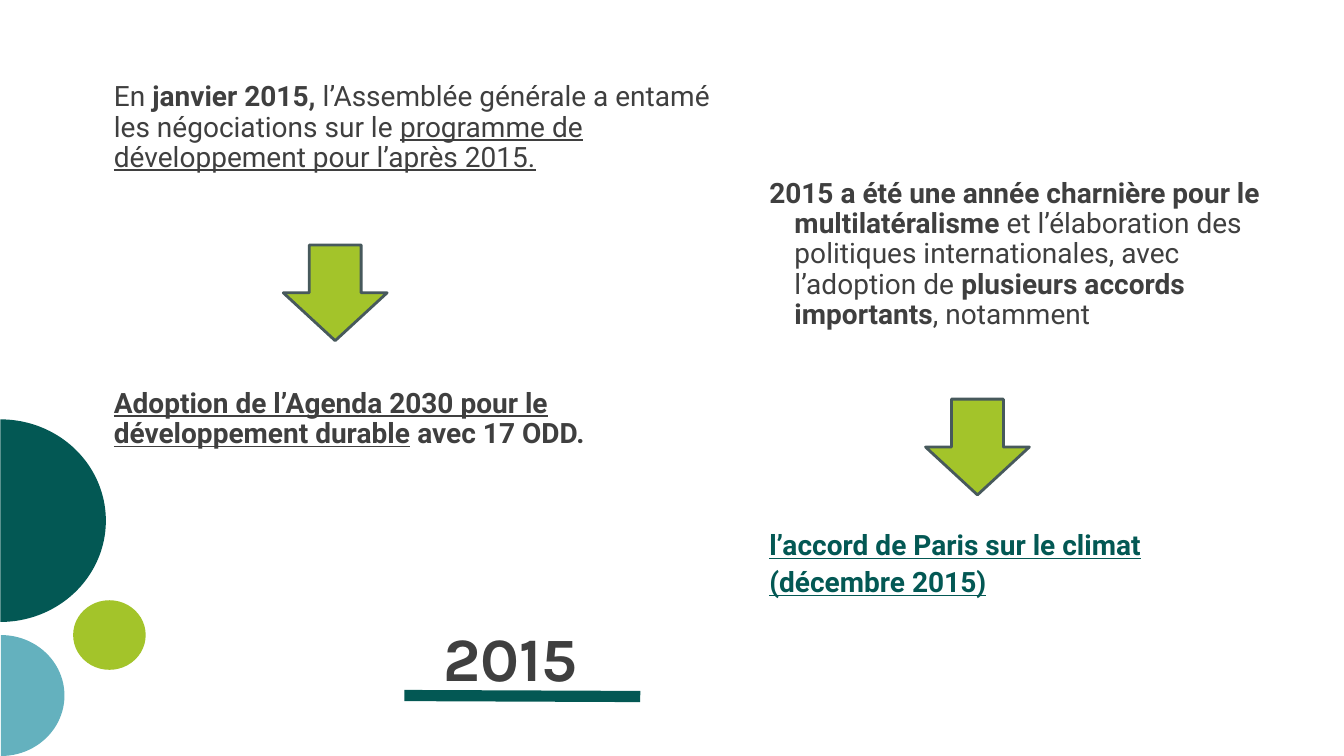
from pptx import Presentation
from pptx.dml.color import RGBColor
from pptx.enum.shapes import MSO_CONNECTOR as LINE, MSO_SHAPE as SHAPE
from pptx.enum.text import MSO_ANCHOR as ANCHOR
from pptx.oxml.ns import qn
from pptx.util import Inches, Pt
from lxml import etree

DARK, GREEN, LIME, BLUE, SLATE = "3F3F3F", "035854", "A3C42A", "64B1BE", "47595C"


def color(code):
    return RGBColor.from_string(code)


def box(at):
    return [Inches(n) for n in at]


def shape(slide, kind, at, fill, edge=None, turn=0):
    item = slide.shapes.add_shape(kind, *box(at))
    item.shadow.inherit = False
    item.rotation = turn
    item.fill.solid()
    item.fill.fore_color.rgb = color(fill)
    if edge:
        item.line.color.rgb = color(edge)
        item.line.width = Pt(2)
    else:
        item.line.fill.background()
    return item


def half(slide, at, fill):
    """Half disc whose round side faces right."""
    disc = shape(slide, SHAPE.PIE, at, fill, turn=270)
    disc.adjustments[0] = 0
    disc.adjustments[1] = 108  # 180 degrees


def arrow(slide, left, top):
    shape(slide, SHAPE.DOWN_ARROW, (left, top, 1.03, 0.95), LIME, edge=SLATE)


def rule(slide, start, end, code, width):
    line = slide.shapes.add_connector(LINE.STRAIGHT, *box(start + end))
    line.line.color.rgb = color(code)
    line.line.width = Pt(width)
    etree.SubElement(line._element.spPr, qn("a:effectLst"))


def text(slide, at, runs, size=20, face="Roboto", code=DARK, inset=(0, 0.05, 0.1, 0.05),
         anchor=ANCHOR.TOP, space=0.9, left=0.25, hang=0):
    """Place one paragraph; each run is (words, style), style holding b for bold, u for underline."""
    frame = slide.shapes.add_textbox(*box(at)).text_frame
    frame.word_wrap = True
    frame.vertical_anchor = anchor
    (frame.margin_left, frame.margin_top,
     frame.margin_right, frame.margin_bottom) = box(inset)
    para = frame.paragraphs[0]
    para.line_spacing = space
    props = para._p.get_or_add_pPr()
    props.set("marL", str(Inches(left)))
    props.set("indent", str(Inches(hang)))
    for words, style in runs:
        run = para.add_run()
        run.text = words
        font = run.font
        font.name, font.size = face, Pt(size)
        font.color.rgb = color(code)
        font.bold = "b" in style
        font.underline = "u" in style


def decor(slide):
    rule(slide, (4.01, 6.9), (6.35, 6.91), GREEN, 8)
    half(slide, (-1, 4.12, 2.01, 2.09), GREEN)
    half(slide, (-0.59, 6.27, 1.2, 1.26), BLUE)
    shape(slide, SHAPE.OVAL, (0.74, 5.94, 0.69, 0.72), LIME, turn=270)


def main():
    deck = Presentation()
    deck.slide_width, deck.slide_height = Inches(13.33), Inches(7.5)
    slide = deck.slides.add_slide(deck.slide_layouts[6])
    decor(slide)

    text(slide, (4.4, 5.83, 2.4, 1.51), [("2015", "b")], size=44, face="Karla",
         inset=(0, 0, 0, 0), anchor=ANCHOR.MIDDLE, space=0.8, left=0)

    text(slide, (0.88, 0.52, 6.55, 1.5), [
        ("En ", ""),
        ("janvier 2015, ", "b"),
        ("l’Assemblée générale a entamé les négociations sur le ", ""),
        ("programme de développement pour l’après 2015.", "u"),
    ], inset=(0, 0.3, 0.1, 0.05))
    arrow(slide, 2.81, 2.43)
    text(slide, (0.78, 3.81, 6.12, 0.71), [
        ("Adoption de l’Agenda 2030 pour le développement durable", "bu"),
        (" avec 17 ODD.", "b"),
    ], inset=(0.1, 0.05, 0.1, 0.05))

    text(slide, (7.38, 1.73, 5.32, 1.7), [
        ("2015 a été une année charnière pour le multilatéralisme ", "b"),
        ("et l’élaboration des politiques internationales, avec l’adoption de ", ""),
        ("plusieurs accords importants", "b"),
        (", notamment", ""),
    ], left=0.5, hang=-0.25)
    arrow(slide, 9.18, 3.96)
    text(slide, (7.38, 5.15, 5.32, 0.85),
         [("l’accord de Paris sur le climat (décembre 2015)", "bu")], code=GREEN, space=1.1)

    deck.save("out.pptx")


if __name__ == "__main__":
    main()
